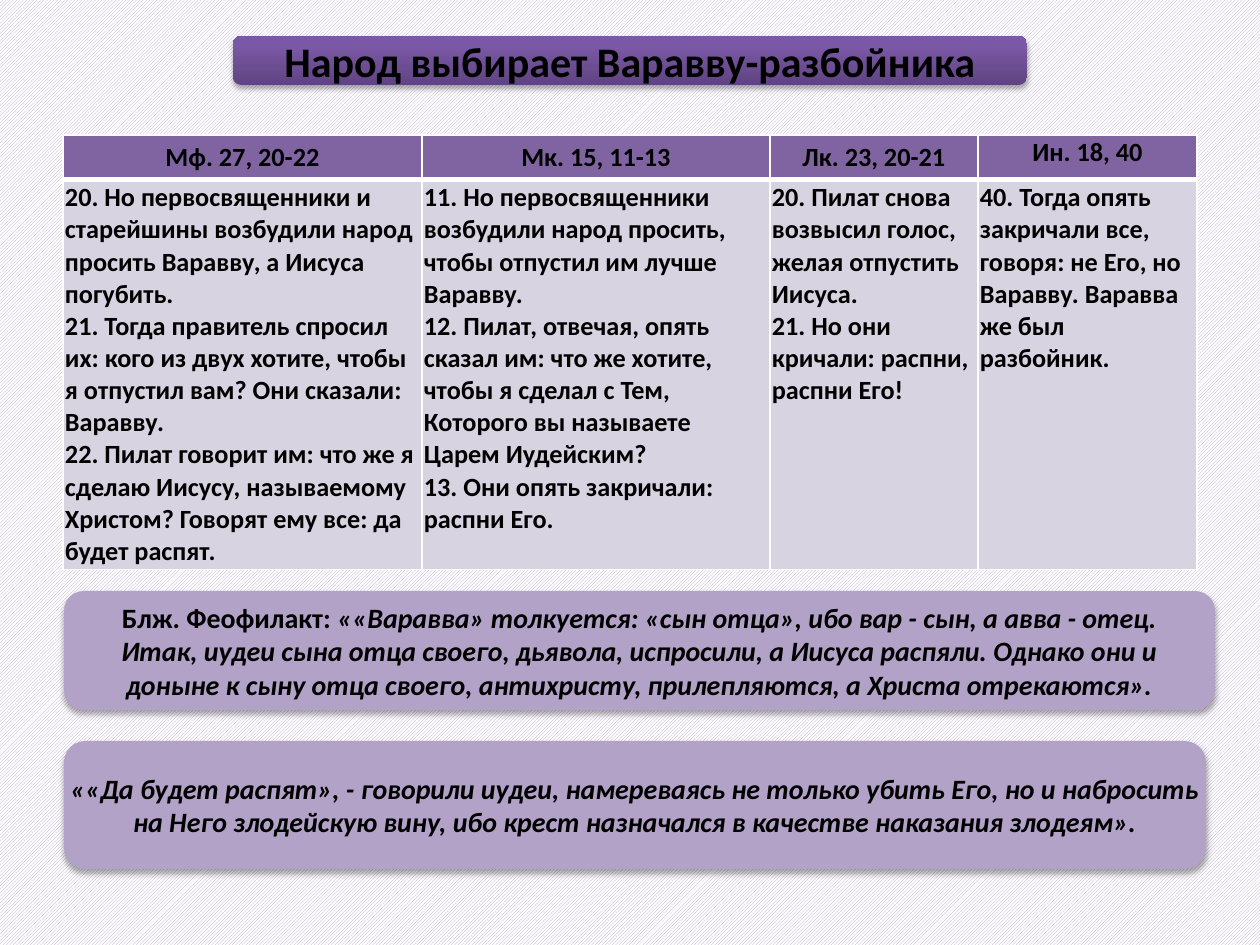
from copy import deepcopy
from dataclasses import dataclass

from lxml import etree
from pptx import Presentation
from pptx import util as u
from pptx.dml.color import RGBColor
from pptx.enum import dml, shapes, text
from pptx.oxml.ns import qn

PX_PER_INCH = 126
FONT = "Calibri"
COLORS = {
    "ink": "000000",
    "paper": "FFFFFF",
    "lilac": "B3A2C7",
    "header": "8064A2",
    "body": "D8D3E0",
    "title_dark": "5F4480",
    "title_mid": "7B58A6",
    "title_light": "7C57A8",
}


@dataclass(frozen=True)
class Shadow:
    blur: float  # points
    distance: float  # points
    opacity: int  # percent


@dataclass(frozen=True)
class Panel:
    left: int
    top: int
    width: int
    height: int
    size: int
    runs: tuple[tuple[str, bool], ...]  # wording, italic
    shadow: Shadow
    side_inset: int = 13


@dataclass(frozen=True)
class Gospel:
    width: int
    reference: str
    verses: tuple[str, ...]
    tight_header: bool = False


SOFT = Shadow(3.5, 2.2, 32)
TITLE = Panel(233, 36, 794, 49, 24,
              (("Народ выбирает Варавву-разбойника", False),), Shadow(3.1, 1.8, 35))
COMMENTS = (
    Panel(64, 591, 1151, 119, 16, (
        ("Блж. Феофилакт: ", False),
        ("««Варавва» толкуется: «сын отца», ибо вар - сын, а авва - отец. Итак, иудеи "
         "сына отца своего, дьявола, испросили, а Иисуса распяли. Однако они и доныне к "
         "сыну отца своего, антихристу, прилепляются, а Христа отрекаются».", True),
    ), SOFT),
    Panel(64, 741, 1142, 128, 16, (
        ("««Да будет распят», - говорили иудеи, намереваясь не только убить Его, но и "
         "набросить на Него злодейскую вину, ибо крест назначался в качестве наказания "
         "злодеям».", True),
    ), SOFT, side_inset=0),
)
GOSPELS = (
    Gospel(359, "Мф. 27, 20-22", (
        "20. Но первосвященники и старейшины возбудили народ просить Варавву, а Иисуса "
        "погубить.",
        "21. Тогда правитель спросил их: кого из двух хотите, чтобы я отпустил вам? Они "
        "сказали: Варавву.",
        "22. Пилат говорит им: что же я сделаю Иисусу, называемому Христом? Говорят ему "
        "все: да будет распят.",
    )),
    Gospel(348, "Мк. 15, 11-13", (
        "11. Но первосвященники возбудили народ просить, чтобы отпустил им лучше Варавву.",
        "12. Пилат, отвечая, опять сказал им: что же хотите, чтобы я сделал с Тем, "
        "Которого вы называете Царем Иудейским?",
        "13. Они опять закричали: распни Его.",
    )),
    Gospel(208, "Лк. 23, 20-21", (
        "20. Пилат снова возвысил голос, желая отпустить Иисуса.",
        "21. Но они кричали: распни, распни Его!",
    )),
    Gospel(219, "Ин. 18, 40", (
        "40. Тогда опять закричали все, говоря: не Его, но Варавву. Варавва же был "
        "разбойник.",
    ), tight_header=True),
)


def px(length: int) -> u.Emu:
    return u.Emu(round(length * 914400 / PX_PER_INCH))


def rgb(name: str) -> RGBColor:
    return RGBColor.from_string(COLORS[name])


def style_run(run, size: int, italic: bool = False) -> None:
    font = run.font
    font.name, font.size, font.bold, font.italic = FONT, u.Pt(size), True, italic
    font.color.rgb = rgb("ink")


def add_shadow(shape, shadow: Shadow) -> None:
    shape.shadow.inherit = False
    effects = shape._element.spPr.find(qn("a:effectLst"))
    outer = etree.SubElement(effects, qn("a:outerShdw"), blurRad=str(u.Pt(shadow.blur)),
                             dist=str(u.Pt(shadow.distance)), dir="5400000",
                             rotWithShape="0")
    color = etree.SubElement(outer, qn("a:srgbClr"), val=COLORS["ink"])
    etree.SubElement(color, qn("a:alpha"), val=str(shadow.opacity * 1000))


def add_panel(slide, panel: Panel):
    shape = slide.shapes.add_shape(
        shapes.MSO_SHAPE.ROUNDED_RECTANGLE,
        *map(px, (panel.left, panel.top, panel.width, panel.height)))
    shape.fill.solid()
    shape.fill.fore_color.rgb = rgb("lilac")
    shape.line.fill.background()
    add_shadow(shape, panel.shadow)
    frame = shape.text_frame
    frame.word_wrap = True
    frame.vertical_anchor = text.MSO_ANCHOR.MIDDLE
    frame.margin_left = frame.margin_right = px(panel.side_inset)
    paragraph = frame.paragraphs[0]
    paragraph.alignment = text.PP_ALIGN.CENTER
    for wording, italic in panel.runs:
        run = paragraph.add_run()
        run.text = wording
        style_run(run, panel.size, italic)
    return shape


def shade_title(title) -> None:
    title.fill.gradient()
    title.fill.gradient_angle = 90
    stop_list = title._element.spPr.find(qn("a:gradFill")).find(qn("a:gsLst"))
    stop_list.insert(1, deepcopy(stop_list[0]))
    stops = ((0, "title_dark"), (0.8, "title_mid"), (1, "title_light"))
    for stop, (position, color) in zip(title.fill.gradient_stops, stops):
        stop.position = position
        stop.color.rgb = rgb(color)


def add_borders(cell, bottom: int) -> None:
    properties = cell._tc.get_or_add_tcPr()
    sides = (("L", 1), ("R", 1), ("T", 1), ("B", bottom))
    for index, (side, width) in enumerate(sides):
        line = etree.Element(qn(f"a:ln{side}"), w=str(u.Pt(width)))
        fill = etree.SubElement(line, qn("a:solidFill"))
        etree.SubElement(fill, qn("a:srgbClr"), val=COLORS["paper"])
        properties.insert(index, line)


def fill_cell(cell, paragraphs: tuple[str, ...], header: bool, tight: bool) -> None:
    cell.text_frame.text = "\n".join(paragraphs)
    for paragraph in cell.text_frame.paragraphs:
        paragraph.alignment = text.PP_ALIGN.CENTER if header else text.PP_ALIGN.LEFT
        style_run(paragraph.runs[0], 15)
    if tight:
        cell.margin_left = cell.margin_right = px(2)
        cell.margin_top = cell.margin_bottom = px(2)
    cell.fill.solid()
    cell.fill.fore_color.rgb = rgb("header" if header else "body")
    add_borders(cell, bottom=3 if header else 1)


def add_gospel_table(slide) -> None:
    row_heights = (44, 390)
    total_width = sum(gospel.width for gospel in GOSPELS)
    table = slide.shapes.add_table(
        len(row_heights), len(GOSPELS),
        *map(px, (63, 135, total_width, sum(row_heights)))).table
    for row, height in zip(table.rows, row_heights):
        row.height = px(height)
    for index, gospel in enumerate(GOSPELS):
        table.columns[index].width = px(gospel.width)
        fill_cell(table.cell(0, index), (gospel.reference,), True, gospel.tight_header)
        fill_cell(table.cell(1, index), gospel.verses, False, True)


def main() -> None:
    deck = Presentation()
    deck.slide_width, deck.slide_height = px(1260), px(945)
    slide = deck.slides.add_slide(deck.slide_layouts[6])

    # Hatched background
    backdrop = slide.background.fill
    backdrop.patterned()
    backdrop.pattern = dml.MSO_PATTERN.LIGHT_UPWARD_DIAGONAL
    backdrop.fore_color.rgb = rgb("lilac")
    backdrop.back_color.rgb = rgb("paper")

    # Parallel verses, title and commentary
    add_gospel_table(slide)
    shade_title(add_panel(slide, TITLE))
    for comment in COMMENTS:
        add_panel(slide, comment)

    deck.save("out.pptx")


if __name__ == "__main__":
    main()
